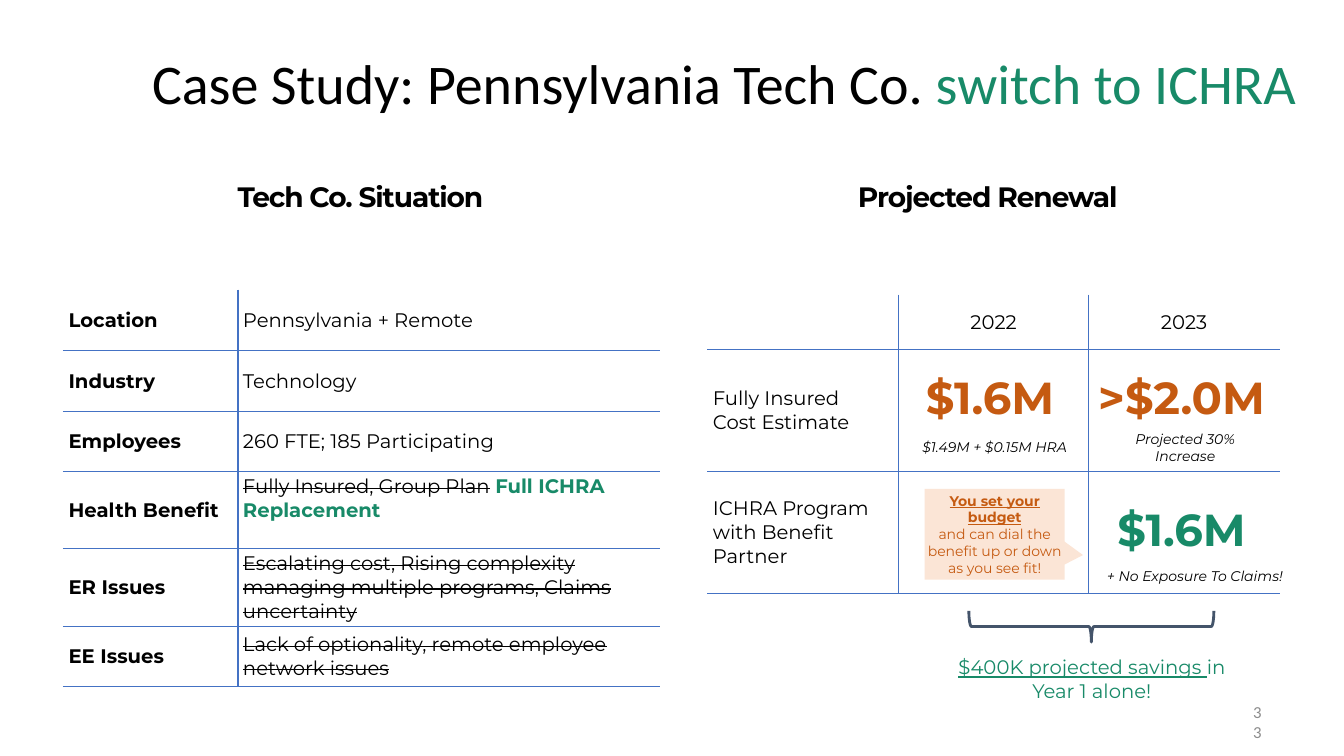
from dataclasses import dataclass, replace

from lxml import etree
from pptx import Presentation
from pptx.dml.color import RGBColor
from pptx.enum.shapes import MSO_SHAPE
from pptx.enum.text import MSO_ANCHOR, MSO_AUTO_SIZE, PP_ALIGN
from pptx.oxml.ns import qn
from pptx.slide import Slide
from pptx.table import _Cell
from pptx.text.text import TextFrame
from pptx.util import Inches, Pt

BLACK = RGBColor(0x00, 0x00, 0x00)
WHITE = RGBColor(0xFF, 0xFF, 0xFF)
GREEN = RGBColor(0x18, 0x8A, 0x68)
ORANGE = RGBColor(0xC5, 0x5A, 0x11)
PEACH = RGBColor(0xFB, 0xE5, 0xD6)
BLUE = RGBColor(0x44, 0x72, 0xC4)
SLATE = RGBColor(0x44, 0x54, 0x6A)
GRAY = RGBColor(0x8C, 0x8C, 0x8C)

LEFT, CENTER, RIGHT = PP_ALIGN.LEFT, PP_ALIGN.CENTER, PP_ALIGN.RIGHT
TOP, MIDDLE = MSO_ANCHOR.TOP, MSO_ANCHOR.MIDDLE
FIT_SHAPE = MSO_AUTO_SIZE.SHAPE_TO_FIT_TEXT
CALLOUT, BRACE = MSO_SHAPE.RECTANGULAR_CALLOUT, MSO_SHAPE.LEFT_BRACE


@dataclass(frozen=True)
class Span:
    text: str
    size: float = 14
    color: RGBColor = BLACK
    bold: bool = False
    italic: bool = False
    underline: bool = False
    strike: bool = False
    tracking: float = 0
    font: str = "Montserrat"


@dataclass(frozen=True)
class Label:
    left: float
    top: float
    width: float
    height: float
    spans: list[Span]
    align: PP_ALIGN = CENTER
    anchor: MSO_ANCHOR = MIDDLE
    line_spacing: float = 1.0
    inset_x: float = 0.03
    inset_y: float = 0.03
    grow: bool = True


@dataclass(frozen=True)
class Grid:
    left: float
    top: float
    columns: list[float]
    rows: list[float]
    cells: list[list[list[Span]]]
    centered_header: bool = False


def write_spans(frame: TextFrame, spans: list[Span], align: PP_ALIGN, line_spacing: float = 1.0) -> None:
    para = frame.paragraphs[0]
    para.alignment = align
    para.line_spacing = line_spacing
    for span in spans:
        for index, line in enumerate(span.text.split("\n")):
            if index:
                para.add_line_break()
            if not line:
                continue
            run = para.add_run()
            run.text = line
            font = run.font
            font.name, font.size = span.font, Pt(span.size)
            font.bold, font.italic, font.underline = span.bold, span.italic, span.underline
            font.color.rgb = span.color
            properties = run._r.get_or_add_rPr()
            if span.strike:
                properties.set("strike", "sngStrike")
            if span.tracking:
                properties.set("spc", str(round(span.tracking * 100)))


def fill_frame(frame: TextFrame, label: Label) -> None:
    frame.word_wrap = True
    if label.grow:
        frame.auto_size = FIT_SHAPE
    frame.vertical_anchor = label.anchor
    frame.margin_left = frame.margin_right = Inches(label.inset_x)
    frame.margin_top = frame.margin_bottom = Inches(label.inset_y)
    write_spans(frame, label.spans, label.align, label.line_spacing)


def bounds(label: Label) -> list[int]:
    return [Inches(value) for value in (label.left, label.top, label.width, label.height)]


def draw_label(page: Slide, label: Label) -> None:
    fill_frame(page.shapes.add_textbox(*bounds(label)).text_frame, label)


def draw_callout(page: Slide, label: Label) -> None:
    callout = page.shapes.add_shape(CALLOUT, *bounds(label))
    callout.adjustments[0], callout.adjustments[1] = 0.63, 0.23
    callout.shadow.inherit = False
    callout.fill.solid()
    callout.fill.fore_color.rgb = PEACH
    callout.line.fill.background()
    fill_frame(callout.text_frame, label)


def draw_brace(page: Slide) -> None:
    brace = page.shapes.add_shape(BRACE, Inches(10.67), Inches(5), Inches(0.31), Inches(2.43))
    brace.rotation = 270
    brace.shadow.inherit = False
    brace.fill.background()
    brace.line.color.rgb = SLATE
    brace.line.width = Pt(2)


def set_border(cell: _Cell, side: str, color: RGBColor) -> None:
    line = etree.SubElement(cell._tc.get_or_add_tcPr(), qn(f"a:ln{side}"), w=str(Pt(1)))
    fill = etree.SubElement(line, qn("a:solidFill"))
    etree.SubElement(fill, qn("a:srgbClr"), val=str(color))


def draw_grid(page: Slide, grid: Grid) -> None:
    frame = page.shapes.add_table(
        len(grid.rows), len(grid.columns), Inches(grid.left), Inches(grid.top),
        Inches(sum(grid.columns)), Inches(sum(grid.rows)))
    table = frame.table
    table.first_row = table.horz_banding = False
    for column, width in zip(table.columns, grid.columns):
        column.width = Inches(width)
    for row, height in zip(table.rows, grid.rows):
        row.height = Inches(height)
    last_column = len(grid.columns) - 1
    for row_index, row_cells in enumerate(grid.cells):
        for column_index, spans in enumerate(row_cells):
            cell = table.cell(row_index, column_index)
            set_border(cell, "L", BLUE if column_index else WHITE)
            set_border(cell, "R", BLUE if column_index < last_column else WHITE)
            set_border(cell, "T", BLUE if row_index else WHITE)
            set_border(cell, "B", BLUE)
            cell.fill.solid()
            cell.fill.fore_color.rgb = WHITE
            cell.vertical_anchor = MIDDLE
            cell.margin_left = cell.margin_right = Inches(0.05)
            cell.margin_top = cell.margin_bottom = Inches(0.03)
            if len(spans) > 1:
                cell.margin_bottom = Inches(0.26)
            header = grid.centered_header and row_index == 0
            write_spans(cell.text_frame, spans, CENTER if header else LEFT)


HEADING = Span("", 20, bold=True, tracking=-0.8)
AMOUNT = Span("", 32, ORANGE, bold=True)
NOTE = Span("", 10, italic=True)

SITUATION = [
    ("Location", [Span("Pennsylvania + Remote")]),
    ("Industry", [Span("Technology")]),
    ("Employees", [Span("260 FTE; 185 Participating")]),
    ("Health Benefit", [Span("Fully Insured, Group Plan", strike=True), Span(" "),
                        Span("Full ICHRA Replacement", color=GREEN, bold=True)]),
    ("ER Issues", [Span("Escalating cost, Rising complexity managing multiple programs, "
                        "Claims uncertainty", strike=True)]),
    ("EE Issues", [Span("Lack of optionality, remote employee network issues", strike=True)]),
]
GRIDS = [
    Grid(0.63, 2.88, [1.73, 4.18], [0.6, 0.6, 0.6, 0.76, 0.76, 0.6],
         [[[Span(name, bold=True)], spans] for name, spans in SITUATION]),
    Grid(7.02, 2.93, [1.89] * 3, [0.54, 1.21, 1.21],
         [[[], [Span("2022")], [Span("2023")]],
          [[Span("Fully Insured\nCost Estimate")], [], []],
          [[Span("ICHRA Program with Benefit Partner")], [], []]], centered_header=True),
]
LABELS = [
    Label(1.41, 0.58, 11.64, 0.55,
          [Span("Case Study: Pennsylvania Tech Co. ", 40, font="Calibri"),
           Span("switch to ICHRA", 40, GREEN, font="Calibri")],
          LEFT, line_spacing=0.9, inset_x=0.1, inset_y=0.05, grow=False),
    Label(12.33, 7.02, 0.25, 0.28, [Span("33", 12, GRAY, font="Calibri")], RIGHT,
          inset_x=0.1, inset_y=0.05, grow=False),
    *[Label(left, 1.82, 6.19, 0.44, [replace(HEADING, text=text)], anchor=TOP,
            line_spacing=0.8, grow=False)
      for left, text in ((0.48, "Tech Co. Situation"), (6.7, "Projected Renewal"))],
    *[Label(left, top, 2.48, 0.61, [replace(AMOUNT, text=text, color=color)])
      for left, top, text, color in (
          (8.58, 3.63, "$1.6M", ORANGE), (10.48, 3.63, ">$2.0M", ORANGE),
          (10.48, 4.94, "$1.6M", GREEN))],
    *[Label(left, top, width, height, [replace(NOTE, text=text)])
      for left, top, width, height, text in (
          (9.03, 4.32, 1.67, 0.22, "$1.49M + $0.15M HRA"),
          (10.92, 4.24, 1.67, 0.39, "Projected 30% Increase"),
          (10.83, 5.6, 2.04, 0.22, "+ No Exposure To Claims!"))],
    Label(9.33, 6.47, 3, 0.53, [Span("$400K projected savings ", color=GREEN, underline=True),
                                Span("in Year 1 alone!", color=GREEN)]),
]
BUDGET = Label(9.17, 4.85, 1.39, 0.9, [
    Span("You set your budget\n", 10, ORANGE, bold=True, underline=True),
    Span("and can dial the benefit up or down as you see fit!", 10, ORANGE)])


def main() -> None:
    deck = Presentation()
    deck.slide_width, deck.slide_height = Inches(13.33), Inches(7.5)
    page = deck.slides.add_slide(deck.slide_layouts[6])
    for grid in GRIDS:
        draw_grid(page, grid)
    for label in LABELS:
        draw_label(page, label)
    draw_callout(page, BUDGET)
    draw_brace(page)
    deck.save("out.pptx")


if __name__ == "__main__":
    main()
